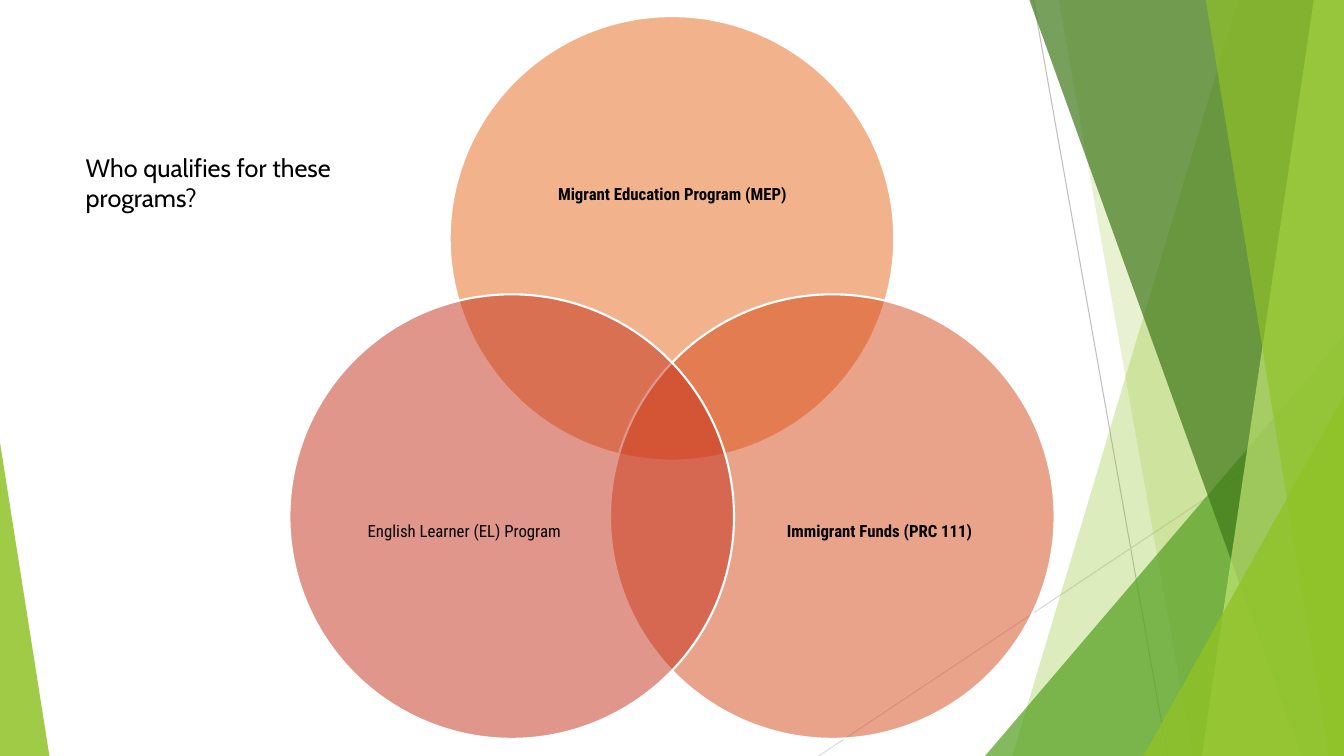
from dataclasses import dataclass

from lxml.etree import SubElement
from pptx import Presentation
from pptx.dml.color import RGBColor
from pptx.enum.shapes import MSO_CONNECTOR, MSO_SHAPE
from pptx.enum.text import MSO_ANCHOR, MSO_AUTO_SIZE, PP_ALIGN
from pptx.oxml.ns import qn
from pptx.shapes.autoshape import Shape
from pptx.slide import Slide
from pptx.text.text import TextFrame
from pptx.util import Inches, Pt

SLIDE_WIDTH = 13.33
SLIDE_HEIGHT = 7.5
CIRCLE_SIZE = 4.41


@dataclass
class Ray:
    start: tuple[float, float]
    end: tuple[float, float]
    color: str


@dataclass
class Facet:
    top_left: float
    bottom_left: float
    color: str
    opacity: int


@dataclass
class Corner:
    left: float
    width: float
    height: float
    apex: float
    color: str
    opacity: int


@dataclass
class Program:
    name: str
    circle: tuple[float, float]
    label: tuple[float, float, float, float]
    color: str
    bold: bool


RAYS = [
    Ray((10.25, 0), (11.58, SLIDE_HEIGHT), "BFBFBF"),
    Ray((SLIDE_WIDTH, 4.03), (8.12, SLIDE_HEIGHT), "D9D9D9"),
]
DECORATIONS = [
    Facet(12.28, 10.04, "90C226", 30),
    Facet(10.5, 11.83, "90C226", 20),
    Corner(9.77, 3.56, 4.17, 1, "54A021", 72),
    Facet(10.21, 12.91, "3F7819", 70),
    Facet(13.03, 11.92, "C0E474", 70),
    Facet(11.96, 13.18, "90C226", 65),
    Corner(11.34, 1.99, 3.57, 1, "90C226", 80),
    Corner(0, 0.49, 3.11, 0, "90C226", 85),
]
PROGRAMS = [
    Program("Migrant Education Program (MEP)", (4.46, 0.16), (5.05, 0.94, 3.24, 1.99), "E76618", True),
    Program("Immigrant Funds (PRC 111)", (6.05, 2.92), (7.4, 4.06, 2.65, 2.43), "D54819", True),
    Program("English Learner (EL) Program", (2.87, 2.92), (3.28, 4.06, 2.65, 2.43), "C42F1A", False),
]


def rgb(color: str) -> RGBColor:
    return RGBColor.from_string(color)


def paint(shape: Shape, color: str, opacity: int) -> None:
    shape.shadow.inherit = False
    shape.fill.solid()
    shape.fill.fore_color.rgb = rgb(color)
    color_element = shape.fill._xPr.find(qn("a:solidFill"))[0]
    SubElement(color_element, qn("a:alpha"), val=str(opacity * 1000))


def write(frame: TextFrame, text: str, font_name: str, size: int, bold: bool = False) -> None:
    frame.word_wrap = True
    frame.text = text
    font = frame.paragraphs[0].font
    font.name = font_name
    font.size = Pt(size)
    font.bold = bold
    font.color.rgb = rgb("000000")


def draw_ray(slide: Slide, ray: Ray) -> None:
    connector = slide.shapes.add_connector(
        MSO_CONNECTOR.STRAIGHT, *map(Inches, ray.start + ray.end)
    )
    connector.line.color.rgb = rgb(ray.color)
    connector.line.width = Pt(0.75)
    SubElement(connector._element.spPr, qn("a:effectLst"))


def draw_facet(slide: Slide, facet: Facet) -> None:
    builder = slide.shapes.build_freeform(Inches(facet.top_left), 0)
    corners = [(SLIDE_WIDTH, 0), (SLIDE_WIDTH, SLIDE_HEIGHT), (facet.bottom_left, SLIDE_HEIGHT)]
    builder.add_line_segments([(Inches(x), Inches(y)) for x, y in corners], close=True)
    shape = builder.convert_to_shape()
    paint(shape, facet.color, facet.opacity)
    shape.line.fill.background()


def draw_corner(slide: Slide, corner: Corner) -> None:
    shape = slide.shapes.add_shape(
        MSO_SHAPE.ISOSCELES_TRIANGLE,
        Inches(corner.left),
        Inches(SLIDE_HEIGHT - corner.height),
        Inches(corner.width),
        Inches(corner.height),
    )
    shape.adjustments[0] = corner.apex
    paint(shape, corner.color, corner.opacity)
    shape.line.fill.background()


def draw_program(slide: Slide, program: Program) -> None:
    left, top = map(Inches, program.circle)
    circle = slide.shapes.add_shape(
        MSO_SHAPE.OVAL, left, top, Inches(CIRCLE_SIZE), Inches(CIRCLE_SIZE)
    )
    paint(circle, program.color, 50)
    circle.line.color.rgb = rgb("FFFFFF")
    circle.line.width = Pt(1.5)

    frame = slide.shapes.add_textbox(*map(Inches, program.label)).text_frame
    frame.margin_left = frame.margin_right = frame.margin_top = frame.margin_bottom = 0
    frame.vertical_anchor = MSO_ANCHOR.MIDDLE
    write(frame, program.name, "Roboto Condensed", 12, program.bold)
    paragraph = frame.paragraphs[0]
    paragraph.alignment = PP_ALIGN.CENTER
    paragraph.line_spacing = 0.9


def draw_title(slide: Slide) -> None:
    title = slide.shapes.title
    title.left, title.top = Inches(0.75), Inches(1.46)
    title.width, title.height = Inches(3.22), Inches(0.71)
    frame = title.text_frame
    frame.auto_size = MSO_AUTO_SIZE.NONE
    frame.vertical_anchor = MSO_ANCHOR.TOP
    write(frame, "Who qualifies for these programs?", "Cabin", 18)
    frame.paragraphs[0].alignment = PP_ALIGN.LEFT


def main() -> None:
    presentation = Presentation()
    presentation.slide_width = Inches(SLIDE_WIDTH)
    presentation.slide_height = Inches(SLIDE_HEIGHT)
    slide = presentation.slides.add_slide(presentation.slide_layouts[5])

    draw_title(slide)
    for ray in RAYS:
        draw_ray(slide, ray)
    for decoration in DECORATIONS:
        if isinstance(decoration, Facet):
            draw_facet(slide, decoration)
        else:
            draw_corner(slide, decoration)
    for program in PROGRAMS:
        draw_program(slide, program)

    presentation.save("out.pptx")


if __name__ == "__main__":
    main()
